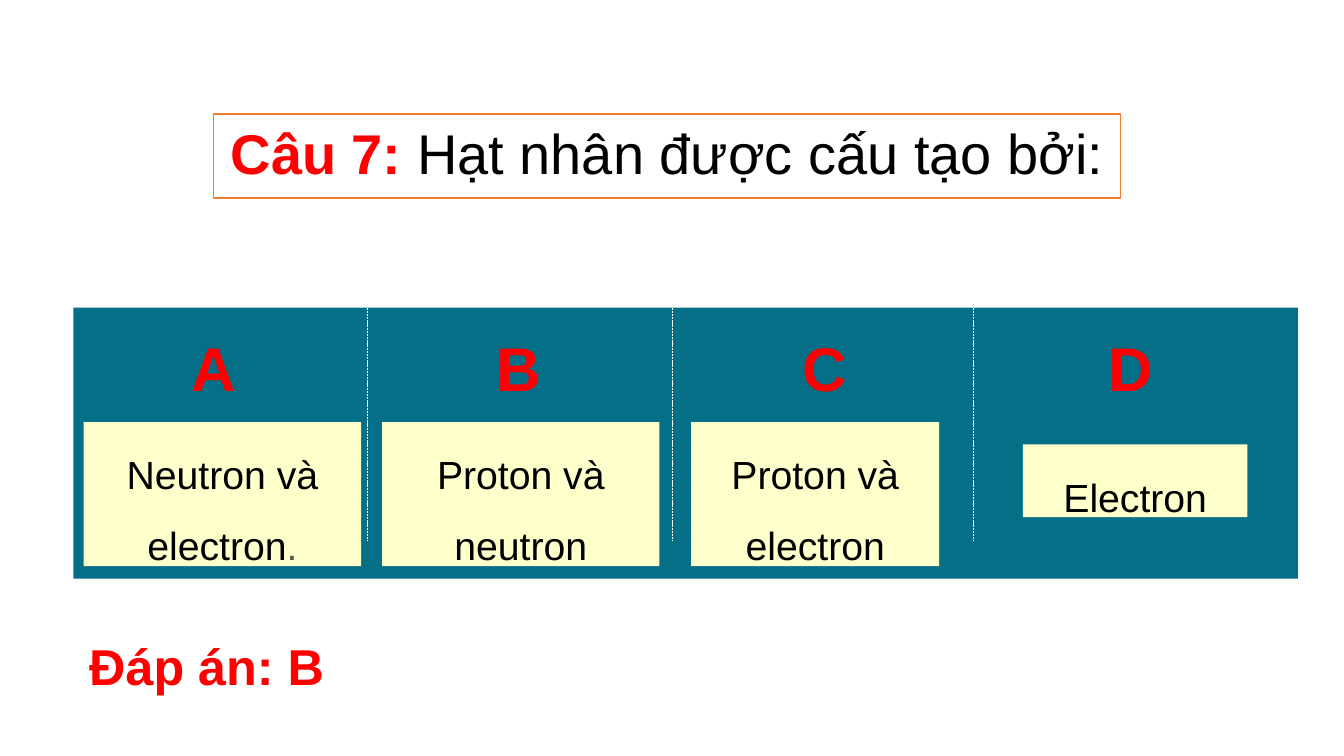
from dataclasses import dataclass

from lxml import etree
from pptx import Presentation
from pptx import util as u
from pptx.dml.color import RGBColor
from pptx.enum import dml, shapes, text

RED, BLACK, GRAY = "FF0000", "000000", "595959"
WHITE, TEAL, CREAM, ORANGE = "FFFFFF", "046F87", "FFFFCC", "ED7D31"


@dataclass(frozen=True)
class Run:
    text: str
    color: str = BLACK
    bold: bool = False


@dataclass(frozen=True)
class Box:
    left: float
    top: float
    width: float
    height: float

    def place(self) -> tuple:
        return tuple(u.Cm(n) for n in (self.left, self.top, self.width, self.height))


@dataclass(frozen=True)
class Choice:
    letter: str
    box: Box
    runs: tuple


CHOICES = (
    Choice("A", Box(2.11, 10.64, 6.99, 3.63),
           (Run("Neutron và electron"), Run(".", GRAY))),
    Choice("B", Box(9.63, 10.64, 6.99, 3.63), (Run("Proton và neutron"),)),
    Choice("C", Box(17.42, 10.64, 6.25, 3.63), (Run("Proton và electron"),)),
    Choice("D", Box(25.78, 11.2, 5.66, 1.83), (Run("Electron"),)),
)
SPLITS = (9.27, 16.94, 24.54)


def paint(part, color: str) -> None:
    if hasattr(part, "solid"):
        part.solid()
        part.fore_color.rgb = RGBColor.from_string(color)
    else:
        part.rgb = RGBColor.from_string(color)


def write(shape, runs: tuple, size: float, space: float = 1.0) -> None:
    frame = shape.text_frame
    frame.word_wrap = True
    frame.auto_size = text.MSO_AUTO_SIZE.SHAPE_TO_FIT_TEXT
    frame.vertical_anchor = text.MSO_ANCHOR.TOP
    para = frame.paragraphs[0]
    para.alignment = text.PP_ALIGN.CENTER
    para.line_spacing = space
    para.font.name = "Arial"
    para.font.size = u.Pt(size)
    for item in runs:
        run = para.add_run()
        run.text = item.text
        run.font.bold = item.bold
        paint(run.font.color, item.color)


def add_rect(slide, box: Box, color: str):
    rect = slide.shapes.add_shape(shapes.MSO_SHAPE.RECTANGLE, *box.place())
    rect.shadow.inherit = False
    paint(rect.fill, color)
    rect.line.fill.background()
    return rect


def add_label(slide, box: Box, run: Run, size: float):
    label = slide.shapes.add_textbox(*box.place())
    write(label, (run,), size)
    return label


def add_split(slide, left: float) -> None:
    split = slide.shapes.add_connector(
        shapes.MSO_CONNECTOR.STRAIGHT,
        u.Cm(left), u.Cm(7.26), u.Cm(left), u.Cm(13.64))
    paint(split.line.fill, WHITE)
    split.line.width = u.Pt(0.5)
    split.line.dash_style = dml.MSO_LINE.SQUARE_DOT
    props = split._element.spPr
    space = props.nsmap["a"]
    etree.SubElement(props, f"{{{space}}}effectLst")


def add_title(slide) -> None:
    title = slide.shapes.title
    title.left, title.top, title.width, title.height = Box(5.38, 2.87, 22.86, 1.96).place()
    paint(title.fill, WHITE)
    paint(title.line.fill, ORANGE)
    title.line.width = u.Pt(1)
    write(title, (Run("Câu 7: ", RED, True), Run("Hạt nhân được cấu tạo bởi:")), 40)


def add_answer(slide) -> None:
    label = add_label(slide, Box(1.73, 16, 6.96, 1.55), Run("Đáp án: B", RED, True), 36)
    frame = label.text_frame
    frame.margin_left = frame.margin_right = 0
    frame.margin_top = frame.margin_bottom = 0


def main() -> None:
    deck = Presentation()
    deck.slide_width, deck.slide_height = u.Cm(33.87), u.Cm(19.05)
    slide = deck.slides.add_slide(deck.slide_layouts[5])
    add_title(slide)
    add_rect(slide, Box(1.85, 7.75, 30.86, 6.83), TEAL)
    for left in SPLITS:
        add_split(slide, left)
    for i, choice in enumerate(CHOICES):
        add_label(slide, Box(3.15 + 7.7 * i, 8.2, 4.47, 2.13),
                  Run(choice.letter, RED, True), 44)
        write(add_rect(slide, choice.box, CREAM), choice.runs, 28, 1.5)
    add_answer(slide)
    deck.save("out.pptx")


if __name__ == "__main__":
    main()
